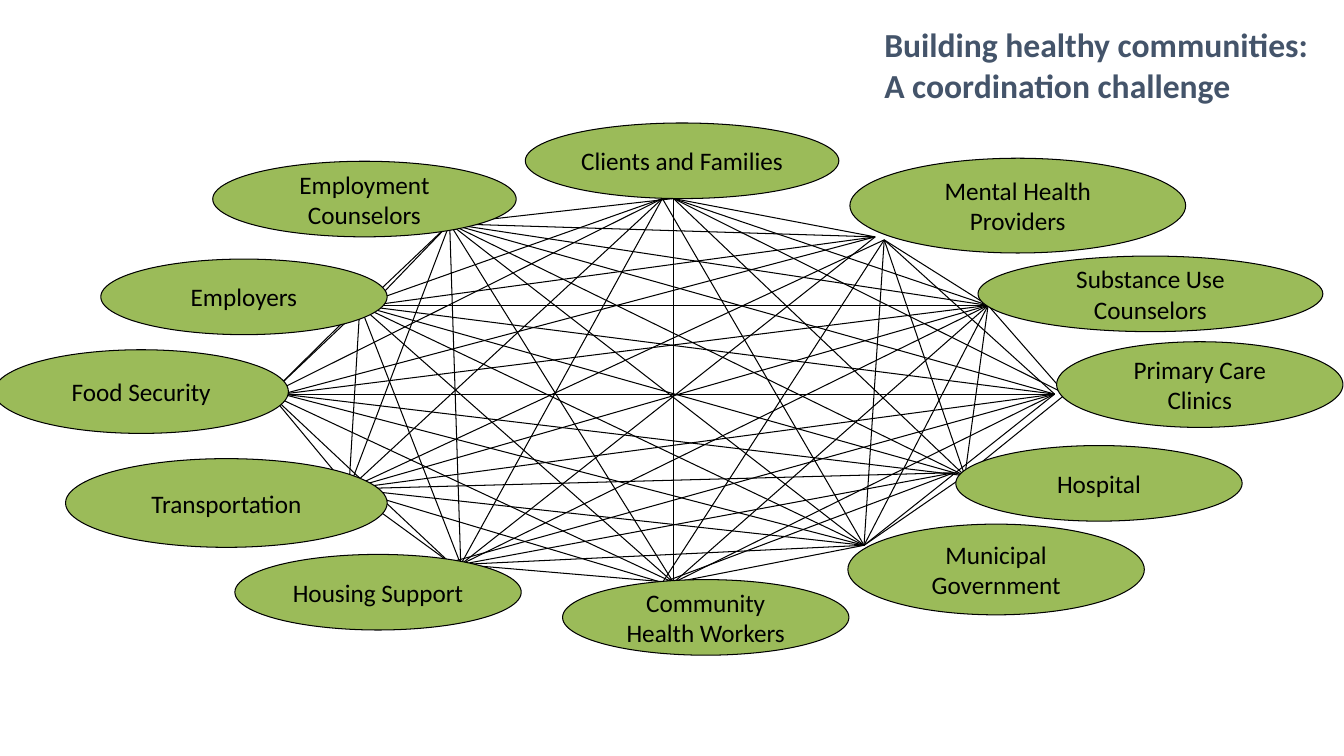
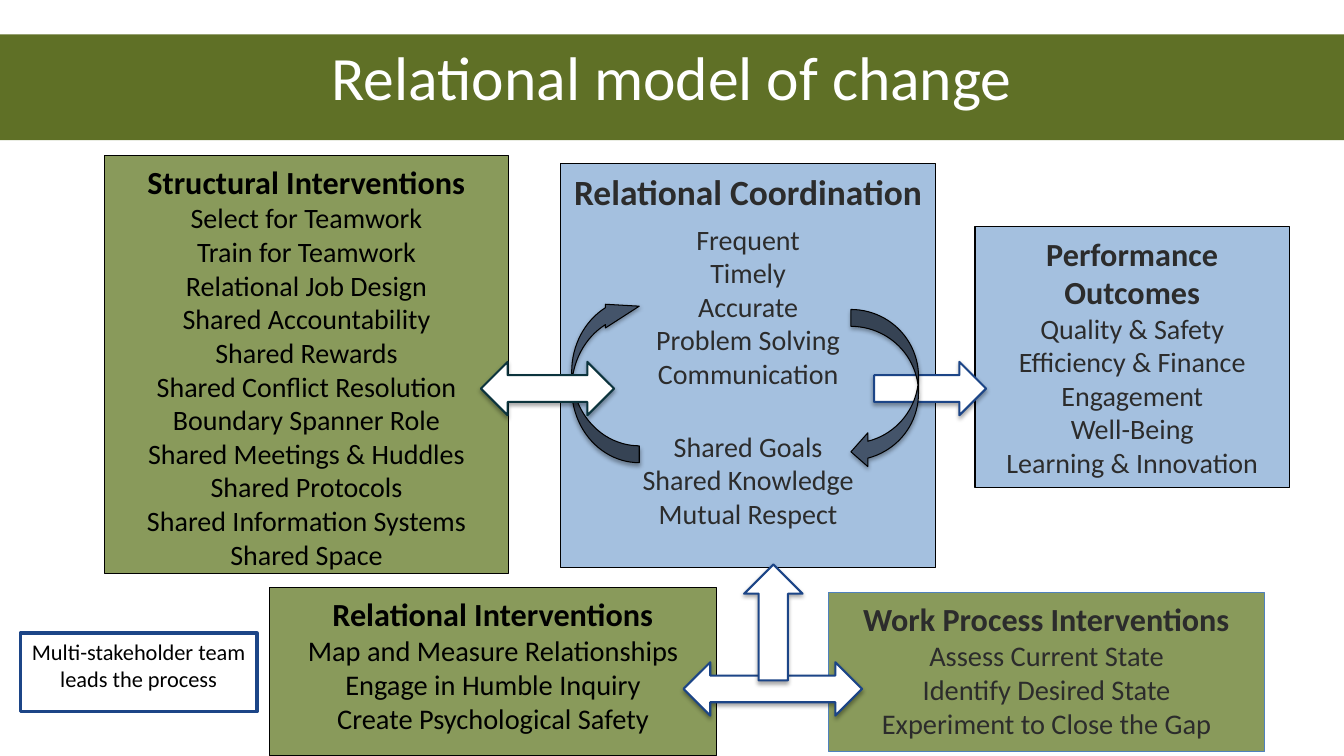
import itertools

import pptx
import pptx.dml.color
import pptx.enum.shapes
import pptx.enum.text
import pptx.oxml
import pptx.oxml.ns
import pptx.util

RGBColor = pptx.dml.color.RGBColor
Shape = pptx.enum.shapes.MSO_SHAPE
Align = pptx.enum.text.PP_ALIGN
Anchor = pptx.enum.text.MSO_ANCHOR

BLACK = RGBColor(0x00, 0x00, 0x00)
WHITE = RGBColor(0xFF, 0xFF, 0xFF)
CHARCOAL = RGBColor(0x2C, 0x2C, 0x2C)
SLATE = RGBColor(0x44, 0x54, 0x6A)
LEAF = RGBColor(0x9B, 0xBB, 0x59)
OLIVE = RGBColor(0x89, 0x9A, 0x5B)
DARK_OLIVE = RGBColor(0x5F, 0x70, 0x26)
SKY = RGBColor(0xA4, 0xC0, 0xDF)
BLUE = RGBColor(0x4F, 0x81, 0xBD)
NAVY = RGBColor(0x1C, 0x45, 0x87)
TEAL = RGBColor(0x0C, 0x34, 0x3D)

HUBS = {
    "Mental Health Providers": ((843, 157, 333, 94), (877, 238)),
    "Substance Use Counselors": ((970, 254, 342, 75), (980, 303)),
    "Primary Care Clinics": ((1048, 339, 284, 85), (1046, 391)),
    "Hospital": ((948, 442, 284, 75), (957, 472)),
    "Municipal Government": ((841, 520, 294, 90), (857, 541)),
    "Community Health Workers": ((558, 575, 284, 75), (668, 578)),
    "Housing Support": ((233, 550, 284, 75), (457, 560)),
    "Transportation": ((65, 455, 319, 88), (346, 485)),
    "Food Security": ((-6, 347, 292, 83), (268, 391)),
    "Employers": ((100, 257, 284, 75), (357, 303)),
    "Employment Counselors": ((211, 160, 301, 75), (446, 222)),
    "Clients and Families": ((521, 122, 311, 75), (668, 197)),
}

SIDE_ANCHORS = {
    "Clients and Families": ((657, 197), (
        "Municipal Government", "Housing Support", "Transportation",
        "Food Security", "Employers")),
    "Mental Health Providers": ((868, 235), (
        "Clients and Families", "Employment Counselors", "Employers",
        "Food Security", "Housing Support")),
    "Primary Care Clinics": ((1057, 391), (
        "Clients and Families", "Substance Use Counselors", "Hospital")),
    "Hospital": ((946, 469), (
        "Transportation", "Housing Support", "Community Health Workers")),
    "Community Health Workers": ((657, 578), (
        "Mental Health Providers", "Transportation", "Hospital")),
    "Housing Support": ((446, 558), (
        "Primary Care Clinics", "Food Security", "Transportation")),
    "Food Security": ((280, 391), (
        "Mental Health Providers", "Substance Use Counselors",
        "Municipal Government", "Hospital")),
    "Employers": ((368, 303), (
        "Employment Counselors", "Mental Health Providers")),
}


def px(length):
    return pptx.util.Emu(length * 9144)


def anchor_towards(hub, other):
    point, targets = SIDE_ANCHORS.get(hub, (None, ()))
    return point if other in targets else HUBS[hub][1]


class Deck:
    font = "Calibri"
    title_only = 5

    def __init__(self, width, height):
        self.presentation = pptx.Presentation()
        self.presentation.slide_width = px(width)
        self.presentation.slide_height = px(height)
        self.slide = None

    def new_slide(self):
        layout = self.presentation.slide_layouts[self.title_only]
        self.slide = self.presentation.slides.add_slide(layout)

    def add_text(self, paragraph, text, size, color, bold=False, align=Align.CENTER):
        paragraph.alignment = align
        run = paragraph.add_run()
        run.text = text
        run.font.name = self.font
        run.font.size = pptx.util.Pt(size)
        run.font.bold = bold
        run.font.color.rgb = color

    def next_paragraph(self, frame):
        first = frame.paragraphs[0]
        return frame.add_paragraph() if first.runs else first

    def title(self, bounds, lines, size, color, bold=False, align=Align.CENTER, band=None):
        shape = self.slide.shapes.title
        shape.left, shape.top, shape.width, shape.height = map(px, bounds)
        if band is not None:
            shape.fill.solid()
            shape.fill.fore_color.rgb = band
        frame = shape.text_frame
        frame.word_wrap = True
        frame.auto_size = pptx.enum.text.MSO_AUTO_SIZE.NONE
        frame.vertical_anchor = Anchor.TOP
        for line in lines:
            self.add_text(self.next_paragraph(frame), line, size, color, bold, align)

    def shape(self, kind, bounds, fill, line, weight=0.75):
        shape = self.slide.shapes.add_shape(kind, *map(px, bounds))
        shape.shadow.inherit = False
        if fill is None:
            shape.fill.background()
        else:
            shape.fill.solid()
            shape.fill.fore_color.rgb = fill
        shape.line.color.rgb = line
        shape.line.width = pptx.util.Pt(weight)
        return shape

    def label(self, kind, bounds, text, size, fill, line, weight=0.75, anchor=Anchor.MIDDLE):
        frame = self.shape(kind, bounds, fill, line, weight).text_frame
        frame.word_wrap = True
        frame.vertical_anchor = anchor
        self.add_text(frame.paragraphs[0], text, size, BLACK)

    def panel(self, bounds, heading, items, fill, color, line=BLACK,
              heading_size=23, item_size=20, gaps=None):
        frame = self.shape(Shape.RECTANGLE, bounds, fill, line).text_frame
        frame.word_wrap = True
        frame.vertical_anchor = Anchor.TOP
        frame.margin_left = frame.margin_right = px(12)
        frame.margin_top = frame.margin_bottom = px(7)
        self.add_text(frame.paragraphs[0], heading, heading_size, color, bold=True)
        for item in items:
            paragraph = frame.add_paragraph()
            self.add_text(paragraph, item, item_size, color)
            if gaps and item in gaps:
                paragraph.space_before = pptx.util.Pt(gaps[item])

    def block_arrow(self, kind, bounds, adjustments=(0.5, 0.5), fill=WHITE,
                    line=NAVY, weight=1.5, rotation=0):
        arrow = self.shape(kind, bounds, fill, line, weight)
        arrow.rotation = rotation
        for index, value in enumerate(adjustments):
            arrow.adjustments[index] = value
        effects = arrow._element.spPr.find(pptx.oxml.ns.qn("a:effectLst"))
        effects.append(pptx.oxml.parse_xml(
            f'<a:outerShdw {pptx.oxml.ns.nsdecls("a")} blurRad="39370" dist="22860" '
            'dir="5400000" rotWithShape="0"><a:srgbClr val="000000">'
            '<a:alpha val="34000"/></a:srgbClr></a:outerShdw>'))

    def link(self, start, end):
        connector = self.slide.shapes.add_connector(
            pptx.enum.shapes.MSO_CONNECTOR.STRAIGHT, *map(px, start + end))
        connector.line.color.rgb = BLACK
        connector.line.width = pptx.util.Pt(0.75)
        connector._element.spPr.append(
            pptx.oxml.parse_xml(f'<a:effectLst {pptx.oxml.ns.nsdecls("a")}/>'))


def build_network(deck):
    deck.new_slide()
    deck.title((867, 19, 466, 91),
               ["Building healthy communities:", "A coordination challenge"],
               24, SLATE, bold=True, align=Align.LEFT)
    for hub, other in itertools.combinations(HUBS, 2):
        deck.link(anchor_towards(hub, other), anchor_towards(other, hub))
    for name, (bounds, _) in HUBS.items():
        deck.label(Shape.OVAL, bounds, name, 18, LEAF, BLACK)


def build_change_model(deck):
    deck.new_slide()
    deck.title((0, 34, 1333, 105), ["Relational model of change"], 44, WHITE,
               band=DARK_OLIVE)
    deck.panel((556, 162, 372, 401), "Relational Coordination",
               ["Frequent", "Timely", "Accurate", "Problem Solving", "Communication",
                "Shared Goals", "Shared Knowledge", "Mutual Respect"],
               SKY, CHARCOAL, heading_size=25.3,
               gaps={"Frequent": 6.5, "Shared Goals": 28})
    deck.panel((267, 583, 444, 167), "Relational Interventions",
               ["Map and Measure Relationships", "Engage in Humble Inquiry",
                "Create Psychological Safety"],
               OLIVE, BLACK, item_size=20.3)
    deck.panel((104, 154, 400, 415), "Structural Interventions",
               ["Select for Teamwork", "Train for Teamwork", "Relational Job Design",
                "Shared Accountability", "Shared Rewards", "Shared Conflict Resolution",
                "Boundary Spanner Role", "Shared Meetings & Huddles", "Shared Protocols",
                "Shared Information Systems", "Shared Space"],
               OLIVE, BLACK)
    deck.panel((967, 225, 312, 259), "Performance Outcomes",
               ["Quality & Safety", "Efficiency & Finance", "Engagement", "Well-Being",
                "Learning & Innovation"],
               SKY, CHARCOAL)
    deck.panel((822, 588, 432, 158), "Work Process Interventions",
               ["Assess Current State", "Identify Desired State",
                "Experiment to Close the Gap"],
               OLIVE, CHARCOAL, line=BLUE, item_size=20.3)
    deck.block_arrow(Shape.LEFT_RIGHT_ARROW, (678, 657, 177, 53))
    deck.block_arrow(Shape.UP_ARROW, (738, 560, 58, 115))
    deck.block_arrow(Shape.RIGHT_ARROW, (867, 359, 111, 53))
    deck.block_arrow(Shape.CURVED_LEFT_ARROW, (567, 292, 67, 167), (0.25, 0.35, 0.5),
                     SLATE, BLACK, 0.75, rotation=180)
    deck.block_arrow(Shape.CURVED_LEFT_ARROW, (844, 307, 67, 158), (0.25, 0.5, 0.25),
                     SLATE, BLACK, 0.75)
    deck.block_arrow(Shape.LEFT_RIGHT_ARROW, (477, 359, 132, 53), line=TEAL)
    deck.label(Shape.RECTANGLE, (20, 628, 235, 78),
               "Multi-stakeholder team leads the process", 16, None, NAVY, 2.25,
               Anchor.TOP)


def main():
    deck = Deck(1333, 750)
    build_network(deck)
    build_change_model(deck)
    deck.presentation.save("out.pptx")


if __name__ == "__main__":
    main()
